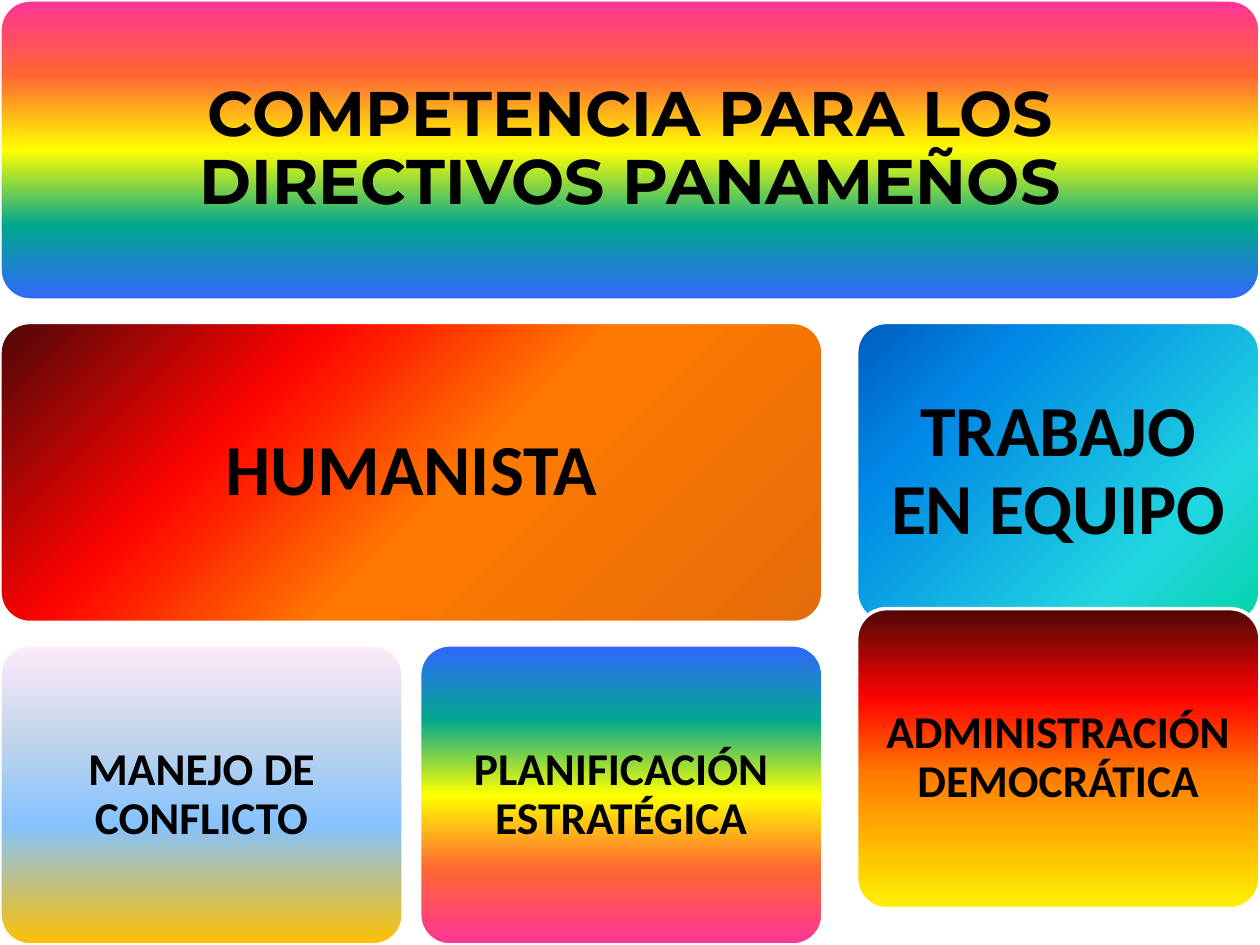
from pptx import Presentation
from pptx.dml.color import RGBColor
from pptx.enum.shapes import MSO_SHAPE
from pptx.enum.text import MSO_ANCHOR, MSO_AUTO_SIZE, PP_ALIGN
from pptx.oxml import parse_xml
from pptx.oxml.ns import nsdecls
from pptx.util import Cm, Pt

SLIDE_WIDTH, SLIDE_HEIGHT = 25.4, 19.05
CARD_WIDTH, CARD_HEIGHT = 8.13, 6.05
ROWS = [index * (SLIDE_HEIGHT - CARD_HEIGHT) / 2 for index in range(3)]
COLUMNS = [0, 8.46, SLIDE_WIDTH - CARD_WIDTH]
WIDE_CARD = COLUMNS[1] + CARD_WIDTH
OVERLAP_ROW = 12.27

RAINBOW = [(0, "FF3399"), (25, "FF6633"), (50, "FFFF00"), (75, "01A78F"), (100, "3366FF")]
EMBER = [(0, "E46C0A"), (45, "FF7A00"), (70, "FF0300"), (100, "4D0808")]
FIRE = [(0, "FFF200")] + EMBER[1:]
DAWN = [(0, "FFC000"), (40, "85C2FF"), (70, "C4D6EB"), (100, "FFEBFA")]
OCEAN = [(0, "03D4A8"), (25, "21D6E0"), (75, "0087E6"), (100, "005CBF")]

DOWN = '<a:lin ang="5400000" scaled="0"/>'
UP = '<a:lin ang="16200000" scaled="0"/>'
FROM_CORNER = '<a:path path="circle"><a:fillToRect l="100000" t="100000"/></a:path>'


def color(value):
    return RGBColor.from_string(value)


def write_text(shape, text, size, font="Calibri", inset=0.28, fill="000000"):
    frame = shape.text_frame
    frame.word_wrap = True
    frame.auto_size = MSO_AUTO_SIZE.NONE
    frame.vertical_anchor = MSO_ANCHOR.MIDDLE
    frame.margin_left = frame.margin_right = Cm(inset)
    frame.margin_top = frame.margin_bottom = Cm(inset)
    paragraph = frame.paragraphs[0]
    paragraph.alignment = PP_ALIGN.CENTER
    paragraph.line_spacing = 0.9
    paragraph.space_before = Pt(0)
    run = paragraph.add_run()
    run.text = text
    run.font.name = font
    run.font.size = Pt(size)
    run.font.bold = True
    run.font.color.rgb = color(fill)


class SlideBuilder:
    outline = "FFFFFF"
    outline_width = 2
    corner = 0.1

    def __init__(self, presentation):
        self.slide = presentation.slides.add_slide(presentation.slide_layouts[5])

    def panel(self, left, top, width, stops, direction):
        shape = self.slide.shapes.add_shape(
            MSO_SHAPE.ROUNDED_RECTANGLE, Cm(left), Cm(top), Cm(width), Cm(CARD_HEIGHT))
        shape.adjustments[0] = self.corner
        shape.shadow.inherit = False
        shape.line.color.rgb = color(self.outline)
        shape.line.width = Pt(self.outline_width)
        self.gradient(shape, stops, direction)
        return shape

    def gradient(self, shape, stops, direction):
        entries = "".join(
            f'<a:gs pos="{position * 1000}"><a:srgbClr val="{color(value)}"/></a:gs>'
            for position, value in stops)
        gradient = parse_xml(
            f'<a:gradFill {nsdecls("a")} rotWithShape="1">'
            f"<a:gsLst>{entries}</a:gsLst>{direction}</a:gradFill>")
        shape._element.spPr.prstGeom.addnext(gradient)

    def title(self, text, stops, direction):
        banner = self.panel(0, ROWS[0], SLIDE_WIDTH, stops, direction)
        title = self.slide.shapes.title
        title.left, title.top = banner.left, banner.top
        title.width, title.height = banner.width, banner.height
        write_text(title, text, 36, font="Montserrat", inset=0.38)
        banner._element.addnext(title._element)

    def card(self, text, left, top, stops, direction, width=CARD_WIDTH, size=26, inset=0.28):
        shape = self.panel(left, top, width, stops, direction)
        write_text(shape, text, size, inset=inset)


def main():
    presentation = Presentation()
    presentation.slide_width = Cm(SLIDE_WIDTH)
    presentation.slide_height = Cm(SLIDE_HEIGHT)
    builder = SlideBuilder(presentation)
    large = {"size": 41, "inset": 0.43}

    builder.title("COMPETENCIA PARA LOS DIRECTIVOS PANAMEÑOS", RAINBOW, DOWN)
    builder.card("HUMANISTA", COLUMNS[0], ROWS[1], EMBER, FROM_CORNER, width=WIDE_CARD, **large)
    builder.card("MANEJO DE CONFLICTO", COLUMNS[0], ROWS[2], DAWN, UP)
    builder.card("PLANIFICACIÓN ESTRATÉGICA", COLUMNS[1], ROWS[2], RAINBOW, UP)
    builder.card("TRABAJO EN EQUIPO", COLUMNS[2], ROWS[1], OCEAN, FROM_CORNER, **large)
    builder.card("ADMINISTRACIÓN DEMOCRÁTICA", COLUMNS[2], OVERLAP_ROW, FIRE, UP)

    presentation.save("out.pptx")


if __name__ == "__main__":
    main()
